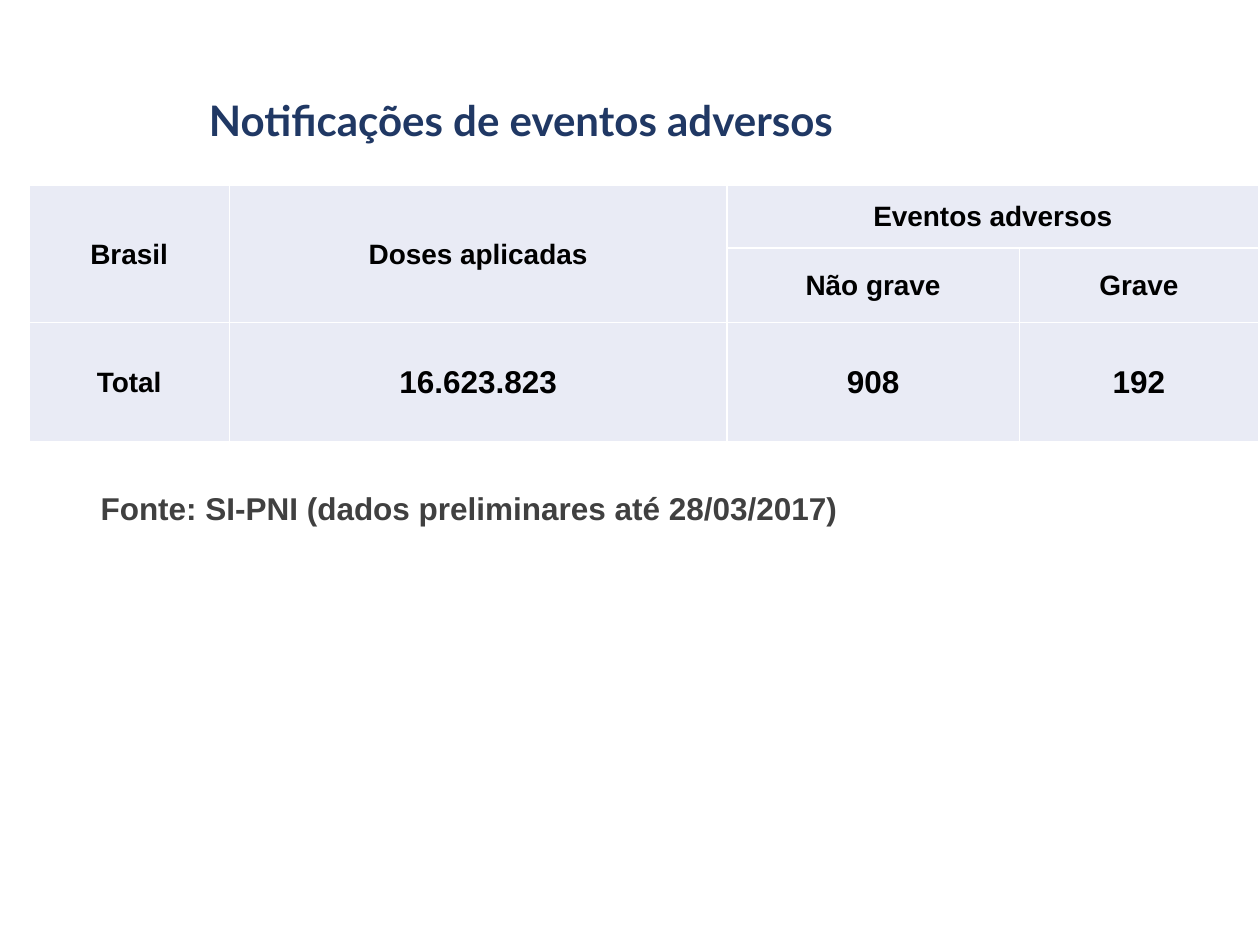
from lxml import etree
from pptx import Presentation
from pptx.dml.color import RGBColor
from pptx.enum.text import MSO_ANCHOR, MSO_AUTO_SIZE, PP_ALIGN
from pptx.oxml.ns import qn
from pptx.util import Inches, Pt

NAVY = RGBColor(0x20, 0x38, 0x64)
GREY = RGBColor(0x40, 0x40, 0x40)
BLACK = RGBColor(0, 0, 0)
WHITE = RGBColor(0xFF, 0xFF, 0xFF)
PALE = RGBColor(0xE9, 0xEB, 0xF5)
LEFT, CENTER = PP_ALIGN.LEFT, PP_ALIGN.CENTER
MIDDLE = MSO_ANCHOR.MIDDLE
GROW = MSO_AUTO_SIZE.SHAPE_TO_FIT_TEXT


def write(frame, text, size=18, font="Arial", color=BLACK, align=LEFT):
    para = frame.paragraphs[0]
    para.alignment = align
    run = para.add_run()
    run.text = text
    run.font.size = Pt(size)
    run.font.name = font
    run.font.bold = True
    run.font.color.rgb = color


class Page:
    def __init__(self, deck):
        self.shapes = deck.slides.add_slide(deck.slide_layouts[6]).shapes
        self.fill = PALE
        self.edge = WHITE

    def label(self, text, box, wrap=True, **style):
        frame = self.shapes.add_textbox(*map(Inches, box)).text_frame
        frame.word_wrap = wrap
        frame.auto_size = GROW
        write(frame, text, **style)

    def border(self, cell):
        props = cell._tc.get_or_add_tcPr()
        for side in ("lnL", "lnR", "lnT", "lnB"):
            line = etree.SubElement(props, qn(f"a:{side}"), w=str(Pt(1)))
            solid = etree.SubElement(line, qn("a:solidFill"))
            etree.SubElement(solid, qn("a:srgbClr"), val=str(self.edge))

    def table(self, left, top, widths, heights, merges, texts):
        size = (sum(widths), sum(heights))
        place = map(Inches, (left, top, *size))
        grid = self.shapes.add_table(len(heights), len(widths), *place).table
        grid.first_row = grid.horz_banding = False
        for col, width in zip(grid.columns, widths):
            col.width = Inches(width)
        for row, height in zip(grid.rows, heights):
            row.height = Inches(height)
        for start, end in merges:
            grid.cell(*start).merge(grid.cell(*end))
        for cell in grid.iter_cells():
            self.border(cell)
            cell.fill.solid()
            cell.fill.fore_color.rgb = self.fill
            cell.vertical_anchor = MIDDLE
            cell.margin_left = cell.margin_right = Inches(0.01)
            cell.margin_top, cell.margin_bottom = Inches(0.01), 0
        for (row, col), (text, points) in texts.items():
            frame = grid.cell(row, col).text_frame
            write(frame, text, size=points, align=CENTER)


def main():
    deck = Presentation()
    deck.slide_width, deck.slide_height = Inches(10), Inches(7.5)
    page = Page(deck)

    # Title
    page.label("Notificações de eventos adversos", (1.56, 0.7, 5.83, 0.5),
               wrap=False, size=24, font="Lato", color=NAVY)

    # Doses and adverse events, with a two-row heading
    page.table(
        0.23, 1.47, (1.59, 3.95, 2.32, 1.9), (0.5, 0.59, 0.95),
        merges=[((0, 0), (1, 0)), ((0, 1), (1, 1)), ((0, 2), (0, 3))],
        texts={
            (0, 0): ("Brasil", 16),
            (0, 1): ("Doses aplicadas", 16),
            (0, 2): ("Eventos adversos", 16),
            (1, 2): ("Não grave", 16),
            (1, 3): ("Grave", 16),
            (2, 0): ("Total", 16),
            (2, 1): ("16.623.823", 18),
            (2, 2): ("908", 18),
            (2, 3): ("192", 18),
        })

    # Data source
    page.label("Fonte: SI-PNI (dados preliminares até 28/03/2017)",
               (0.7, 3.83, 6.72, 0.4), color=GREY)

    deck.save("out.pptx")


if __name__ == "__main__":
    main()
